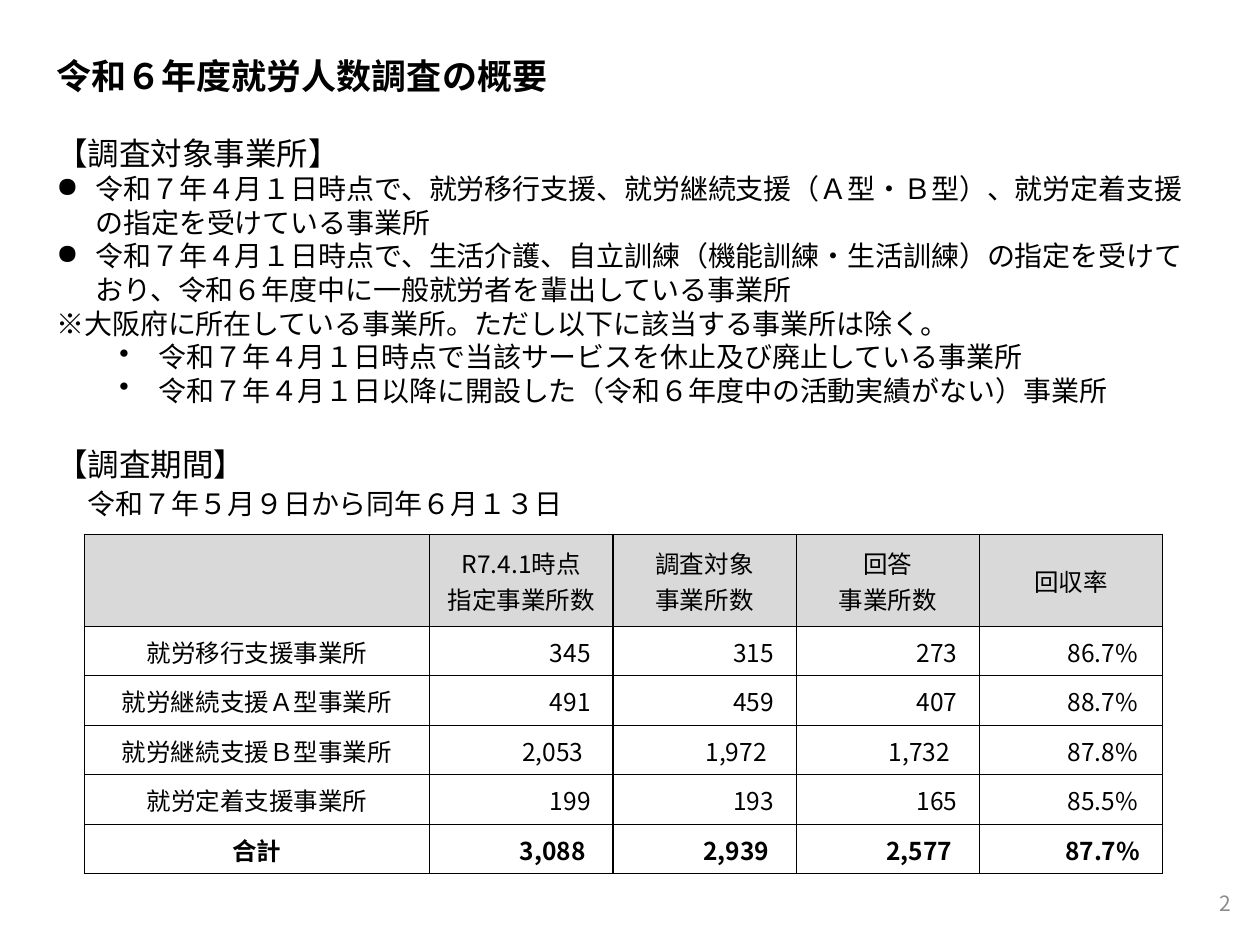
"""Build the slide summarising the FY2024 employment survey."""
from lxml.etree import SubElement
from pptx import Presentation
from pptx.dml.color import RGBColor
from pptx.enum.text import MSO_ANCHOR, PP_ALIGN
from pptx.oxml.ns import qn
from pptx.util import Inches, Pt

FONT = "Noto Sans CJK JP"
BLACK, GRAY, HEADER_FILL = "000000", "8C8C8C", "D9D9D9"
BLANK_LINE = 21.6

TITLE = dict(size=20, bold=True, leading=1.2)
HEADING = dict(size=18, leading=1.2, before=BLANK_LINE)
BODY = dict(size=16, leading=1.2)
ITEM = dict(BODY, bullet="●", left=0.31, hanging=0.31)
SUBITEM = dict(BODY, bullet="•", left=0.81, hanging=0.31)
PERIOD = dict(size=16, leading=1.35, left=0.25)

OVERVIEW = [
    ("令和６年度就労人数調査の概要", TITLE),
    ("【調査対象事業所】", HEADING),
    ("令和７年４月１日時点で、就労移行支援、就労継続支援（Ａ型・Ｂ型）、就労定着支援の指定を受けている事業所", ITEM),
    ("令和７年４月１日時点で、生活介護、自立訓練（機能訓練・生活訓練）の指定を受けており、令和６年度中に一般就労者を輩出している事業所", ITEM),
    ("※大阪府に所在している事業所。ただし以下に該当する事業所は除く。", BODY),
    ("令和７年４月１日時点で当該サービスを休止及び廃止している事業所", SUBITEM),
    ("令和７年４月１日以降に開設した（令和６年度中の活動実績がない）事業所", SUBITEM),
    ("【調査期間】", HEADING),
    ("令和７年５月９日から同年６月１３日", PERIOD),
]
RESPONSES = [
    ("", "R7.4.1時点\n指定事業所数", "調査対象\n事業所数", "回答\n事業所数", "回収率"),
    ("就労移行支援事業所", "345", "315", "273", "86.7%"),
    ("就労継続支援Ａ型事業所", "491", "459", "407", "88.7%"),
    ("就労継続支援Ｂ型事業所", "2,053", "1,972", "1,732", "87.8%"),
    ("就労定着支援事業所", "199", "193", "165", "85.5%"),
    ("合計", "3,088", "2,939", "2,577", "87.7%"),
]
COLUMN_WIDTHS = [2.74] + [1.455] * 4
ROW_HEIGHTS = [0.73] + [0.393] * 5


def rgb(color):
    """Turn a hex string into a colour."""
    return RGBColor.from_string(color)


def write(frame, text, size=14, bold=False, color=BLACK, align=PP_ALIGN.LEFT,
          leading=None, before=0, left=0, hanging=0, bullet=None):
    """Add text to a frame, one paragraph per line."""
    for line in text.split("\n"):
        paragraph = frame.paragraphs[-1]
        if paragraph.runs:
            paragraph = frame.add_paragraph()
        paragraph.alignment = align
        paragraph.space_before = Pt(before)
        if leading:
            paragraph.line_spacing = Pt(size * leading)
        run = paragraph.add_run()
        run.text = line
        run.font.size, run.font.bold, run.font.name = Pt(size), bold, FONT
        run.font.color.rgb = rgb(color)
        SubElement(run.font._element, qn("a:ea"), typeface=FONT)
        properties = paragraph._p.get_or_add_pPr()
        properties.set("marL", str(Inches(left)))
        properties.set("indent", str(-Inches(hanging)))
        if bullet:
            SubElement(properties, qn("a:buChar"), char=bullet)


def add_text_frame(slide, left, top, width, height):
    """Add a wrapping text box and return its frame."""
    frame = slide.shapes.add_textbox(*map(Inches, (left, top, width, height))).text_frame
    frame.word_wrap = True
    return frame


def style_cell(cell, fill):
    """Give a cell its borders, fill, margins and anchor."""
    properties = cell._tc.get_or_add_tcPr()
    for side in ("lnL", "lnR", "lnT", "lnB"):
        border = SubElement(properties, qn(f"a:{side}"), w=str(Pt(0.75)))
        SubElement(SubElement(border, qn("a:solidFill")), qn("a:srgbClr"), val=BLACK)
    if fill:
        cell.fill.solid()
        cell.fill.fore_color.rgb = rgb(fill)
    else:
        cell.fill.background()
    cell.margin_left = cell.margin_right = cell.margin_top = Inches(0.01)
    cell.margin_bottom = 0
    cell.vertical_anchor = MSO_ANCHOR.MIDDLE


def add_responses(slide, left, top):
    """Add the table of offices and response rates."""
    size = sum(COLUMN_WIDTHS), sum(ROW_HEIGHTS)
    table = slide.shapes.add_table(len(RESPONSES), len(COLUMN_WIDTHS),
                                   *map(Inches, (left, top, *size))).table
    for column, width in zip(table.columns, COLUMN_WIDTHS):
        column.width = Inches(width)
    for r, (values, height) in enumerate(zip(RESPONSES, ROW_HEIGHTS)):
        table.rows[r].height = Inches(height)
        for c, value in enumerate(values):
            cell = table.cell(r, c)
            style_cell(cell, HEADER_FILL if r == 0 else None)
            indent = 0 if r == 0 or c == 0 else 0.78 if len(value) == 3 else 0.5
            if value:
                write(cell.text_frame, value, align=PP_ALIGN.CENTER, left=indent,
                      bold=r == len(RESPONSES) - 1)


def main():
    """Compose and save the slide."""
    deck = Presentation()
    deck.slide_width, deck.slide_height = Inches(10), Inches(7.5)
    slide = deck.slides.add_slide(deck.slide_layouts[6])
    overview = add_text_frame(slide, 0.35, 0.36, 9.2, 3.9)
    overview.margin_top = Inches(0.07)
    for text, style in OVERVIEW:
        write(overview, text, **style)
    add_responses(slide, 0.67, 4.24)
    page_number = add_text_frame(slide, 7.62, 6.97, 2.25, 0.4)
    page_number.vertical_anchor = MSO_ANCHOR.MIDDLE
    write(page_number, "2", size=12, color=GRAY, align=PP_ALIGN.RIGHT)
    deck.save("out.pptx")


if __name__ == "__main__":
    main()
